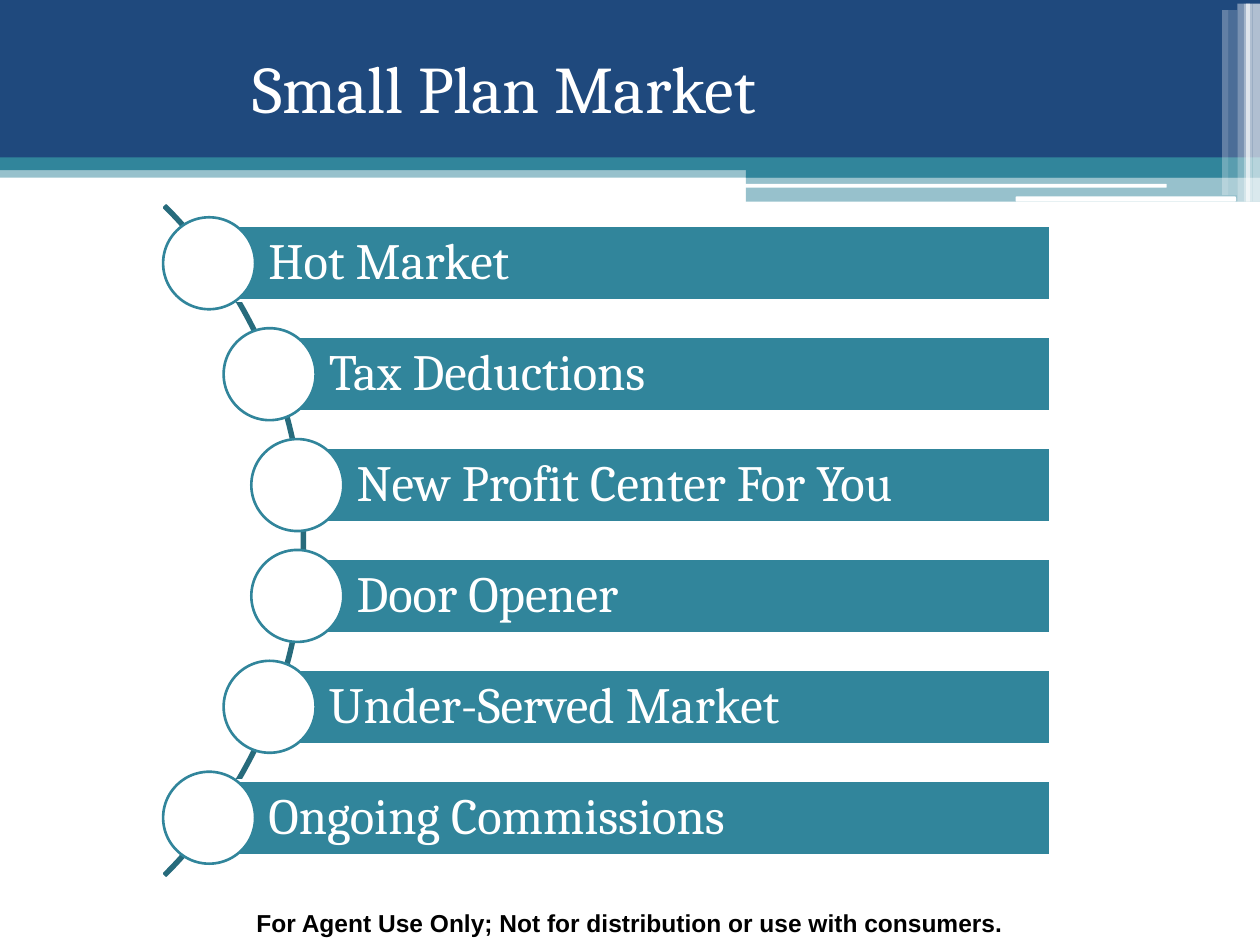
from lxml.etree import SubElement
from pptx import Presentation
from pptx.dml.color import RGBColor
from pptx.enum.shapes import MSO_SHAPE
from pptx.enum.text import MSO_ANCHOR, PP_ALIGN
from pptx.oxml.ns import qn
from pptx.util import Inches, Pt

NAVY, TEAL, DARK_TEAL, WHITE, BLACK = "1F497D", "31859B", "276B7C", "FFFFFF", "000000"

deck = Presentation()
deck.slide_width, deck.slide_height = Inches(10), Inches(7.5)
slide = deck.slides.add_slide(deck.slide_layouts[6])


def paint(color_format, hex_color, opacity=100):
    color_format.rgb = RGBColor.from_string(hex_color)
    if opacity < 100:
        color = color_format._xFill.find(qn("a:srgbClr"))
        SubElement(color, qn("a:alpha"), val=str(opacity * 1000))


def add_shape(kind, box, fill=None, opacity=100, line=None):
    shape = slide.shapes.add_shape(kind, *map(Inches, box))
    shape.shadow.inherit = False
    if fill:
        shape.fill.solid()
        paint(shape.fill.fore_color, fill)
        if opacity < 100:
            color = shape.fill._xPr.find(qn("a:solidFill")).find(qn("a:srgbClr"))
            SubElement(color, qn("a:alpha"), val=str(opacity * 1000))
    else:
        shape.fill.background()
    if line:
        paint(shape.line.color, line)
        shape.line.width = Pt(1.5)
    else:
        shape.line.fill.background()
    return shape


# Header bands
for box, color, opacity in [
    ((0, 1.32, 10, 0.09), TEAL, 50),
    ((0, 0, 10, 1.26), NAVY, 100),
    ((0, 1.25, 10, 0.1), TEAL, 100),
    ((5.92, 1.31, 4.08, 0.1), TEAL, 100),
    ((5.92, 1.4, 4.08, 0.2), TEAL, 50),
]:
    add_shape(MSO_SHAPE.RECTANGLE, box, color, opacity)

# White slits in the lower band
for box in [(5.91, 1.46, 3.35, 0.03), (8.06, 1.56, 1.75, 0.04)]:
    add_shape(MSO_SHAPE.ROUNDED_RECTANGLE, box, WHITE)

# Translucent stripes at the right edge
for left, top, width, height, opacity in [
    (9.94, 0.03, 0.06, 1.57, 65),
    (9.89, 0.03, 0.05, 1.57, 65),
    (9.87, 0.03, 0.05, 1.57, 60),
    (9.82, 0.03, 0.05, 1.57, 40),
    (9.75, 0.08, 0.07, 1.47, 20),
    (9.7, 0.08, 0.05, 1.47, 30),
]:
    add_shape(MSO_SHAPE.RECTANGLE, (left, top, width, height), WHITE, opacity)

# Arc behind the list
arc = add_shape(MSO_SHAPE.BLOCK_ARC, (-5.1, 0.53, 7.52, 7.52), line=DARK_TEAL)
for index, value in enumerate((189, 27, 0.003)):
    arc.adjustments[index] = value

# List bars, each with a circle centred on its left end
BAR_RIGHT, BAR_HEIGHT, CIRCLE, FIRST_MIDDLE, PITCH = 8.34, 0.59, 0.73, 2.09, 0.88
benefits = [
    ("Hot Market", 1.66),
    ("Tax Deductions", 2.14),
    ("New Profit Center For You", 2.36),
    ("Door Opener", 2.36),
    ("Under-Served Market", 2.14),
    ("Ongoing Commissions", 1.66),
]
texts = []
for row, (benefit, left) in enumerate(benefits):
    middle = FIRST_MIDDLE + row * PITCH
    bar = add_shape(
        MSO_SHAPE.RECTANGLE,
        (left, middle - BAR_HEIGHT / 2, BAR_RIGHT - left, BAR_HEIGHT),
        TEAL, line=WHITE)
    add_shape(
        MSO_SHAPE.OVAL,
        (left - CIRCLE / 2, middle - CIRCLE / 2, CIRCLE, CIRCLE),
        WHITE, line=TEAL)
    texts.append((bar, benefit, WHITE,
                  {"margin_left": Inches(0.47), "margin_right": Inches(0.08),
                   "vertical_anchor": MSO_ANCHOR.MIDDLE},
                  {"alignment": PP_ALIGN.LEFT, "line_spacing": 0.9},
                  {"name": "Cambria", "size": Pt(29)}))

# Title and footer
title = slide.shapes.add_textbox(*map(Inches, (0.75, 0.25, 7.32, 0.88)))
footer = slide.shapes.add_textbox(*map(Inches, (0, 7.16, 10, 0.34)))
texts += [
    (title, "Small Plan Market", WHITE,
     {"margin_left": Inches(1.25), "vertical_anchor": MSO_ANCHOR.MIDDLE},
     {"alignment": PP_ALIGN.LEFT},
     {"name": "Cambria", "size": Pt(38)}),
    (footer, "For Agent Use Only; Not for distribution or use with consumers.", BLACK,
     {"vertical_anchor": MSO_ANCHOR.TOP},
     {"alignment": PP_ALIGN.CENTER},
     {"name": "Arial", "size": Pt(14), "bold": True}),
]

# Wording and text formats
for holder, wording, color, frame_format, paragraph_format, font_format in texts:
    frame = holder.text_frame
    frame.word_wrap = True
    paragraph = frame.paragraphs[0]
    run = paragraph.add_run()
    run.text = wording
    paint(run.font.color, color)
    for target, values in [(frame, frame_format), (paragraph, paragraph_format),
                           (run.font, font_format)]:
        for attribute, value in values.items():
            setattr(target, attribute, value)

deck.save("out.pptx")
